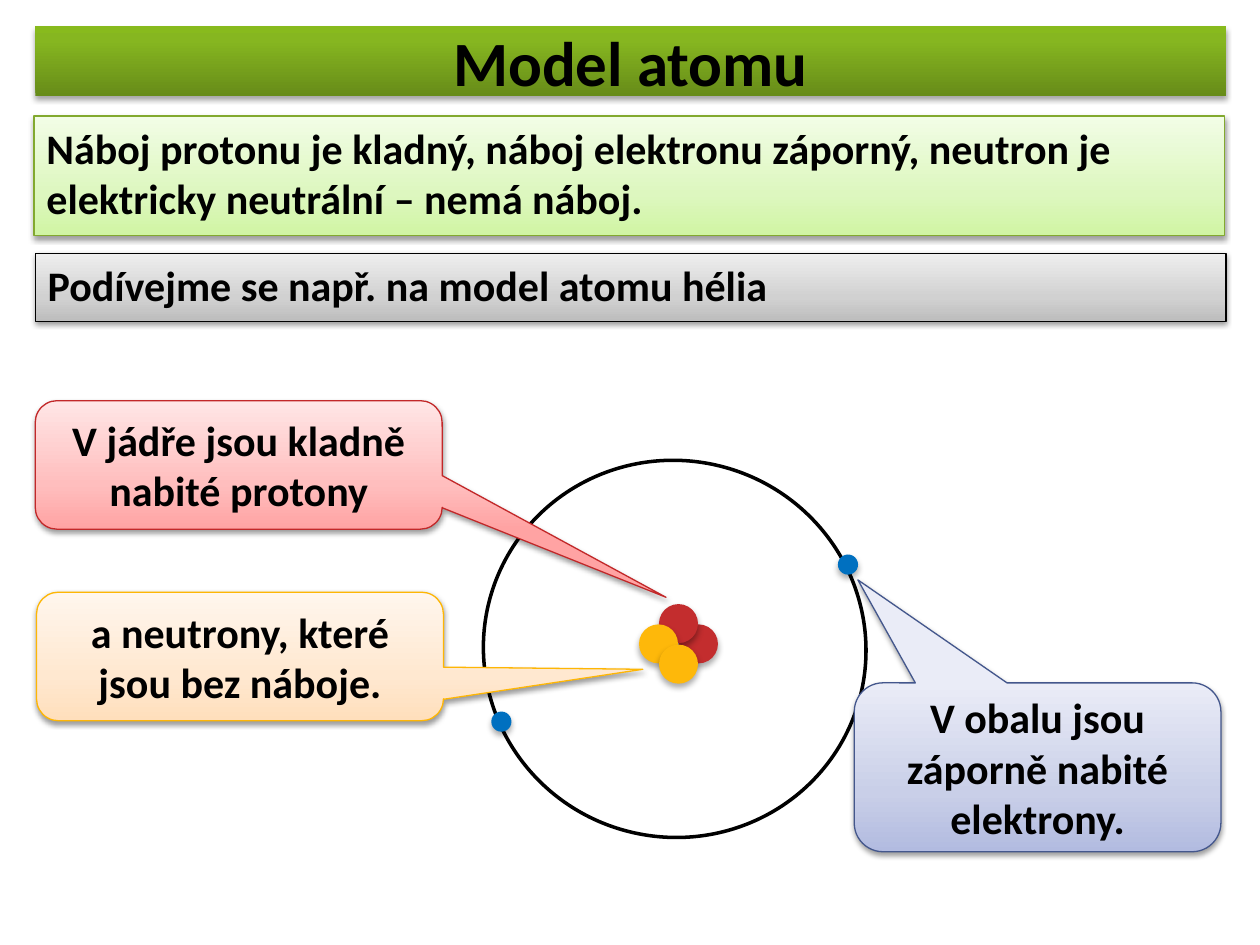
from copy import deepcopy
from dataclasses import dataclass
from math import cos, radians, sin

from lxml.etree import SubElement
from pptx import Presentation
from pptx.dml.color import RGBColor
from pptx.enum.shapes import MSO_SHAPE
from pptx.enum.text import MSO_ANCHOR, MSO_AUTO_SIZE, PP_ALIGN
from pptx.oxml.ns import qn
from pptx.util import Inches, Pt

BLACK = RGBColor(0x00, 0x00, 0x00)
PROTON = RGBColor(0xC3, 0x2D, 0x2E)
NEUTRON = RGBColor(0xFE, 0xB8, 0x0A)
ELECTRON = RGBColor(0x00, 0x70, 0xC0)
GREEN_LINE = RGBColor(0x82, 0xA9, 0x2F)
BLUE_LINE = RGBColor(0x44, 0x57, 0x8C)
RED_LINE = RGBColor(0xC2, 0x28, 0x29)
YELLOW_LINE = RGBColor(0xFE, 0xB6, 0x04)

TITLE_GREENS = (RGBColor(0x67, 0x8C, 0x19), RGBColor(0x86, 0xB6, 0x20), RGBColor(0x88, 0xBA, 0x1D))
GREENS = (RGBColor(0xD0, 0xF5, 0xA3), RGBColor(0xDD, 0xF7, 0xBF), RGBColor(0xF2, 0xFD, 0xE6))
GREYS = (RGBColor(0xBD, 0xBD, 0xBD), RGBColor(0xD1, 0xD1, 0xD1), RGBColor(0xEE, 0xEE, 0xEE))
BLUES = (RGBColor(0xB2, 0xBB, 0xE0), RGBColor(0xC9, 0xCF, 0xE8), RGBColor(0xEA, 0xEC, 0xF7))
REDS = (RGBColor(0xFF, 0xA3, 0xA3), RGBColor(0xFF, 0xBE, 0xBE), RGBColor(0xFF, 0xE6, 0xE6))
ORANGES = (RGBColor(0xFF, 0xDF, 0xBC), RGBColor(0xFF, 0xE8, 0xD0), RGBColor(0xFF, 0xF6, 0xED))

TITLE_SHADOW = (35, 3.1, 1.8)
PANEL_SHADOW = (38, 3.1, 1.6)
PARTICLE_SHADOW = (32, 3.5, 2.2)


@dataclass
class Box:
    left: float
    top: float
    width: float
    height: float

    def place(self):
        return [Inches(n) for n in (self.left, self.top, self.width, self.height)]

    def around(self, across, down, size):
        return Box(self.left + across * self.width - size / 2,
                   self.top + down * self.height - size / 2, size, size)


def set_shadow(shape, opacity, blur, distance):
    shape.shadow.inherit = False
    effects = shape._element.spPr.find(qn("a:effectLst"))
    outer = SubElement(effects, qn("a:outerShdw"), blurRad=str(Pt(blur)),
                       dist=str(Pt(distance)), dir="5400000", rotWithShape="0")
    color = SubElement(outer, qn("a:srgbClr"), val=str(BLACK))
    SubElement(color, qn("a:alpha"), val=str(opacity * 1000))


def set_gradient(shape, colors, middle=0.35):
    shape.fill.gradient()
    shape.fill.gradient_angle = 90
    stops = shape._element.spPr.find(qn("a:gradFill")).find(qn("a:gsLst"))
    stops.append(deepcopy(stops[0]))
    for stop, position, color in zip(shape.fill.gradient_stops, (0, middle, 1), colors):
        stop.position = position
        stop.color.rgb = color


def write_text(shape, text, size=24, align=PP_ALIGN.CENTER, anchor=MSO_ANCHOR.MIDDLE):
    frame = shape.text_frame
    frame.word_wrap = True
    frame.auto_size = MSO_AUTO_SIZE.NONE
    frame.vertical_anchor = anchor
    paragraph = frame.paragraphs[0]
    paragraph.alignment = align
    run = paragraph.add_run()
    run.text = text
    run.font.name = "Calibri"
    run.font.size = Pt(size)
    run.font.bold = True
    run.font.color.rgb = BLACK


def add_title(slide, box, text):
    title = slide.shapes.title
    title.left, title.top, title.width, title.height = box.place()
    set_gradient(title, TITLE_GREENS, middle=0.8)
    set_shadow(title, *TITLE_SHADOW)
    write_text(title, text, size=36)


def add_panel(slide, box, text, colors, line, kind=MSO_SHAPE.RECTANGLE, **text_format):
    panel = slide.shapes.add_shape(kind, *box.place())
    set_gradient(panel, colors)
    panel.line.color.rgb = line
    panel.line.width = Pt(0.75)
    set_shadow(panel, *PANEL_SHADOW)
    write_text(panel, text, **text_format)
    return panel


def add_banner(slide, box, text, colors, line):
    add_panel(slide, box, text, colors, line, align=PP_ALIGN.LEFT, anchor=MSO_ANCHOR.TOP)


def add_callout(slide, box, text, colors, line, tip):
    callout = add_panel(slide, box, text, colors, line, MSO_SHAPE.ROUNDED_RECTANGULAR_CALLOUT)
    for index, value in enumerate((*tip, 0.17)):
        callout.adjustments[index] = value


def add_particle(slide, box, color):
    particle = slide.shapes.add_shape(MSO_SHAPE.OVAL, *box.place())
    particle.fill.solid()
    particle.fill.fore_color.rgb = color
    particle.line.fill.background()
    set_shadow(particle, *PARTICLE_SHADOW)


def add_atom(slide, box):
    ring = 0.053
    for angle, color in ((0, PROTON), (270, PROTON), (180, NEUTRON), (90, NEUTRON)):
        across = 0.51 + ring * cos(radians(angle))
        down = 0.487 + ring * sin(radians(angle))
        add_particle(slide, box.around(across, down, 0.31), color)

    orbit = slide.shapes.add_shape(MSO_SHAPE.OVAL, *box.place())
    orbit.rotation = 285.3
    orbit.fill.background()
    orbit.line.color.rgb = BLACK
    orbit.line.width = Pt(2)
    orbit.shadow.inherit = False

    for across, down in ((0.96, 0.28), (0.04, 0.69)):
        add_particle(slide, box.around(across, down, 0.16), ELECTRON)


def main():
    presentation = Presentation()
    presentation.slide_width = Inches(10)
    presentation.slide_height = Inches(7.5)
    slide = presentation.slides.add_slide(presentation.slide_layouts[5])
    margin, full = 0.28, 9.45

    add_title(slide, Box(margin, 0.21, full, 0.55), "Model atomu")
    add_banner(slide, Box(margin - 0.01, 0.92, full, 0.95),
               "Náboj protonu je kladný, náboj elektronu záporný, neutron je "
               "elektricky neutrální – nemá náboj.", GREENS, GREEN_LINE)
    add_atom(slide, Box(3.86, 3.63, 2.99, 3.04))
    add_callout(slide, Box(6.78, 5.42, 2.91, 1.34), "V obalu jsou záporně nabité elektrony.",
                BLUES, BLUE_LINE, tip=(-0.49, -1.11))
    add_callout(slide, Box(margin, 3.18, 3.23, 1.02), "V jádře jsou kladně nabité protony",
                REDS, RED_LINE, tip=(1.05, 1.03))
    add_callout(slide, Box(margin + 0.01, 4.7, 3.23, 1.02), "a neutrony, které jsou bez náboje.",
                ORANGES, YELLOW_LINE, tip=(0.99, 0.1))
    add_banner(slide, Box(margin, 2.01, full, 0.54),
               "Podívejme se např. na model atomu hélia", GREYS, BLACK)
    presentation.save("out.pptx")


if __name__ == "__main__":
    main()
